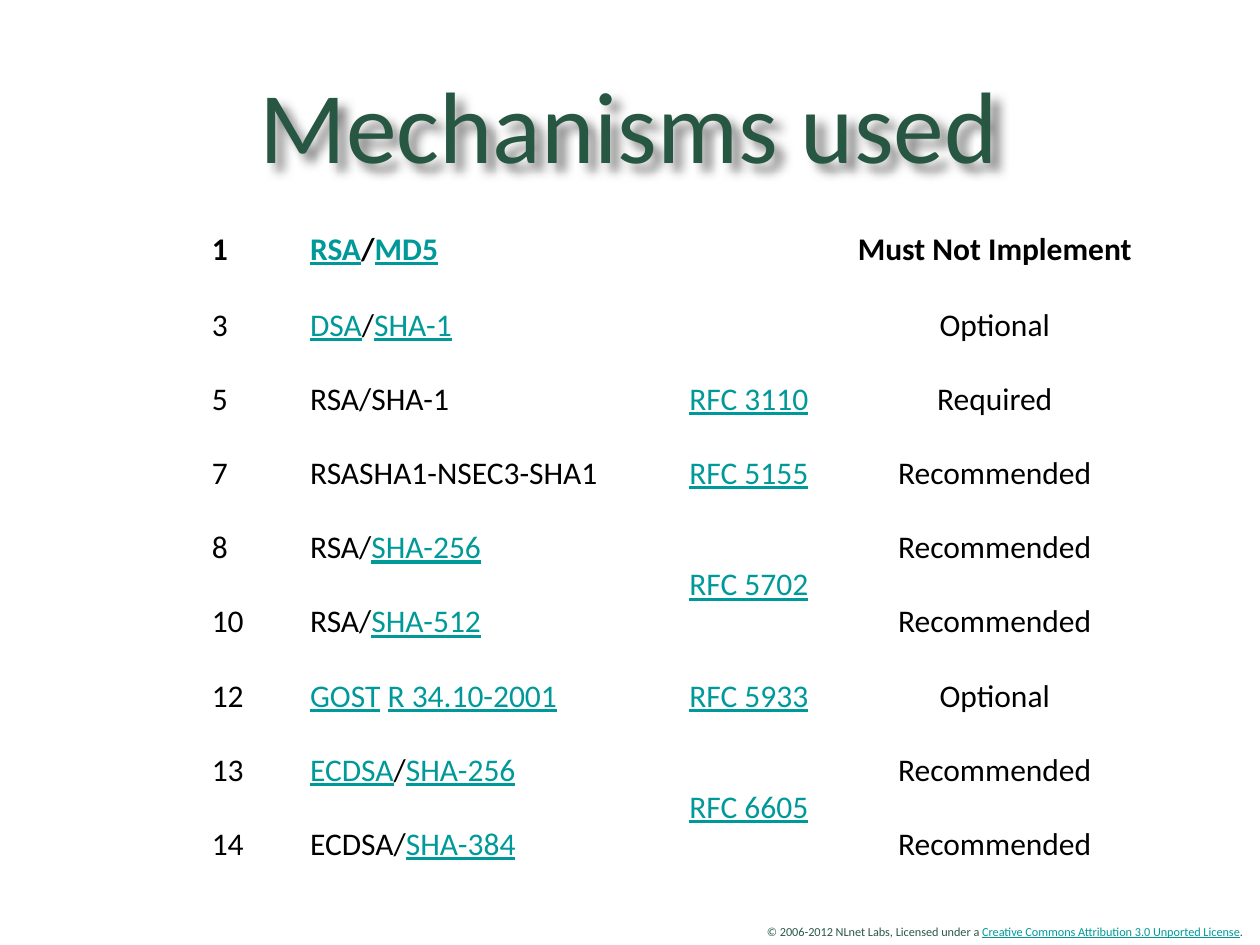
from lxml import etree
from pptx import Presentation
from pptx.dml.color import RGBColor
from pptx.enum.text import MSO_ANCHOR, PP_ALIGN
from pptx.oxml import parse_xml
from pptx.oxml.ns import nsdecls, qn
from pptx.util import Pt

LEFT, CENTER = PP_ALIGN.LEFT, PP_ALIGN.CENTER
MIDDLE = MSO_ANCHOR.MIDDLE

FONT = "Calibri"
WHITE, BLACK, LINK = "FFFFFF", "000000", "009999"
TITLE_GREEN, FOOTER_GREEN = "275742", "2A5947"

COLUMN_WIDTHS = [56.2, 216.7, 90.7, 182.2]
HEADER_HEIGHT, ROW_HEIGHT = 44.6, 42.4
# Text between bars is styled as a link.
MECHANISMS = [
    ("1", "|RSA|/|MD5|", "", "Must Not Implement"),
    ("3", "|DSA|/|SHA-1|", "", "Optional"),
    ("5", "RSA/SHA-1", "|RFC 3110|", "Required"),
    ("7", "RSASHA1-NSEC3-SHA1", "|RFC 5155|", "Recommended"),
    ("8", "RSA/|SHA-256|", "|RFC 5702|", "Recommended"),
    ("10", "RSA/|SHA-512|", "", "Recommended"),
    ("12", "|GOST| |R 34.10-2001|", "|RFC 5933|", "Optional"),
    ("13", "|ECDSA|/|SHA-256|", "|RFC 6605|", "Recommended"),
    ("14", "ECDSA/|SHA-384|", "", "Recommended"),
]
RFC_COLUMN = 2
SHARED_RFC_ROWS = [4, 7]


def rgb(color):
    return RGBColor.from_string(color)


def write(frame, text, size, color=BLACK, bold=False, align=LEFT):
    """Fill the first paragraph; text between bars gets the link style."""
    paragraph = frame.paragraphs[0]
    paragraph.alignment = align
    paragraph.font.size = Pt(size)
    for index, part in enumerate(text.split("|")):
        if not part:
            continue
        is_link = index % 2 == 1
        run = paragraph.add_run()
        run.text = part
        font = run.font
        font.name, font.size, font.bold = FONT, Pt(size), bold
        font.underline = is_link
        font.color.rgb = rgb(LINK if is_link else color)


def add_text(slide, box, text, margin=0, wrap=True, **style):
    text_box = slide.shapes.add_textbox(*map(Pt, box))
    frame = text_box.text_frame
    frame.word_wrap = wrap
    frame.vertical_anchor = MIDDLE
    frame.margin_left = frame.margin_right = Pt(margin)
    frame.margin_top = frame.margin_bottom = Pt(margin)
    write(frame, text, align=CENTER, **style)
    return text_box


def add_title(slide, box):
    title = add_text(slide, box, "Mechanisms used", margin=4, size=58, color=TITLE_GREEN)
    title._element.spPr.append(parse_xml(
        f'<a:effectLst {nsdecls("a")}>'
        f'<a:outerShdw blurRad="{Pt(6)}" dist="{Pt(6)}" dir="2700000" rotWithShape="0">'
        '<a:srgbClr val="000000"><a:alpha val="50000"/></a:srgbClr>'
        '</a:outerShdw></a:effectLst>'))


def set_borders(cell, **widths):
    """Draw white borders; widths are keyed by L, R, T and B."""
    properties = cell._tc.get_or_add_tcPr()
    for position, side in enumerate("LRTB"):
        line = etree.Element(qn(f"a:ln{side}"), w=str(Pt(widths.get(side, 1))))
        fill = etree.SubElement(line, qn("a:solidFill"))
        etree.SubElement(fill, qn("a:srgbClr"), val=WHITE)
        properties.insert(position, line)


def add_mechanisms(slide, box):
    table = slide.shapes.add_table(len(MECHANISMS), len(COLUMN_WIDTHS), *map(Pt, box)).table
    for column, width in zip(table.columns, COLUMN_WIDTHS):
        column.width = Pt(width)
    for r, mechanism in enumerate(MECHANISMS):
        table.rows[r].height = Pt(ROW_HEIGHT if r else HEADER_HEIGHT)
        for c, text in enumerate(mechanism):
            cell = table.cell(r, c)
            cell.vertical_anchor = MIDDLE
            cell.fill.solid()
            cell.fill.fore_color.rgb = rgb(WHITE)
            set_borders(cell, T=3 if r == 1 else 1, B=3 if r == 0 else 1)
            write(cell.text_frame, text, size=18, bold=r == 0,
                  align=CENTER if c == len(mechanism) - 1 else LEFT)
    for r in SHARED_RFC_ROWS:
        table.cell(r, RFC_COLUMN).merge(table.cell(r + 1, RFC_COLUMN))


def add_footer(slide, box):
    add_text(slide, box,
             "© 2006-2012 NLnet Labs, Licensed under a "
             "|Creative Commons Attribution 3.0 Unported License|.",
             wrap=False, size=7, color=FOOTER_GREEN)


def main():
    presentation = Presentation()
    presentation.slide_width, presentation.slide_height = Pt(720), Pt(540)
    slide = presentation.slides.add_slide(presentation.slide_layouts[6])
    add_footer(slide, (430.6, 524.2, 287.3, 15.8))
    add_title(slide, (69.8, 13.7, 578.9, 113))
    table_height = HEADER_HEIGHT + ROW_HEIGHT * (len(MECHANISMS) - 1)
    add_mechanisms(slide, (113.8, 120.2, sum(COLUMN_WIDTHS), table_height))
    presentation.save("out.pptx")


if __name__ == "__main__":
    main()
